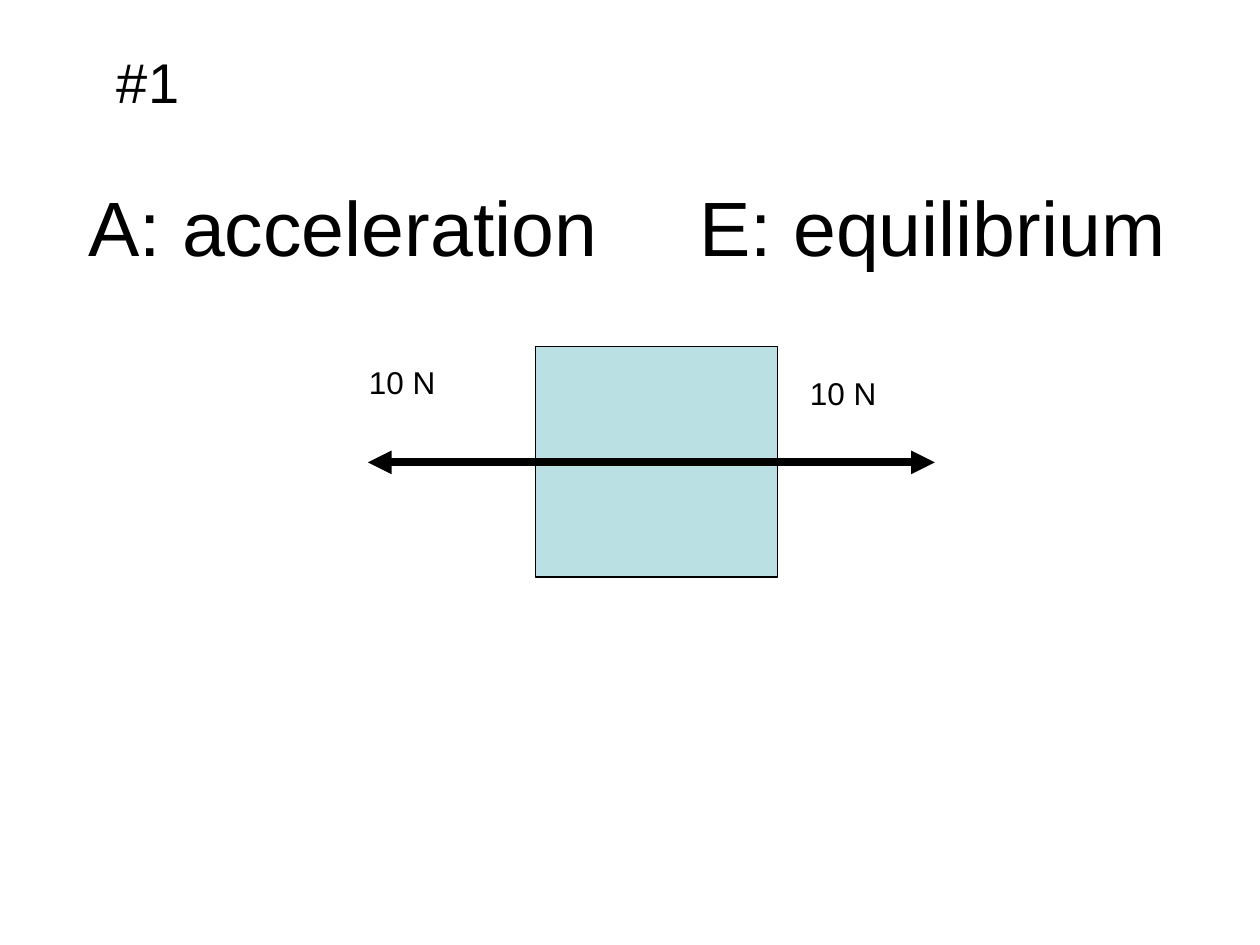
from pptx import Presentation
from pptx.dml.color import RGBColor
from pptx.enum.shapes import MSO_CONNECTOR as Connector, MSO_SHAPE as Shape
from pptx.enum.text import MSO_ANCHOR as Anchor, MSO_AUTO_SIZE as AutoSize, PP_ALIGN as Align
from pptx.oxml.ns import qn
from pptx.util import Inches, Pt
from lxml.etree import SubElement

TITLE = "A: acceleration\tE: equilibrium"
TITLE_AREA = (0.5, 1.17, 9, 1.25)
TITLE_INSET, TITLE_TAB = 0.2, 4.85
BLOCK = (4.25, 2.75, 1.92, 1.83)
FORCE_ORIGIN = (5.17, 3.67)
FORCE_REACHES = [2.25, -2.25]
LABELS = [
    ("10 N", "label", (2.83, 2.83, 1, 0.4)),
    ("10 N", "label", (6.33, 2.92, 1, 0.4)),
    ("#1", "number", (0.83, 0.33, 1.08, 0.63)),
]
THEME = {
    "font": "Arial",
    "ink": RGBColor.from_string("000000"),
    "block": RGBColor.from_string("BBE0E3"),
    "sizes": {"title": 44, "label": 18, "number": 32},
    "outline": 0.75,
    "force": 4.5,
}


def inches(values):
    return [Inches(value) for value in values]


def write(para, text, role):
    span = para.add_run()
    span.text = text
    span.font.name = THEME["font"]
    span.font.size = Pt(THEME["sizes"][role])
    span.font.color.rgb = THEME["ink"]


def add_title(page):
    title = page.shapes.title
    title.left, title.top, title.width, title.height = inches(TITLE_AREA)
    frame = title.text_frame
    frame.vertical_anchor = Anchor.MIDDLE
    frame.auto_size = AutoSize.NONE
    frame.margin_left = Inches(TITLE_INSET)
    para = frame.paragraphs[0]
    para.alignment = Align.LEFT
    tabs = SubElement(para._p.get_or_add_pPr(), qn("a:tabLst"))
    SubElement(tabs, qn("a:tab"), pos=str(Inches(TITLE_TAB)), algn="l")
    write(para, TITLE, "title")


def add_block(page):
    block = page.shapes.add_shape(Shape.RECTANGLE, *inches(BLOCK))
    block.shadow.inherit = False
    block.fill.solid()
    block.fill.fore_color.rgb = THEME["block"]
    block.line.color.rgb = THEME["ink"]
    block.line.width = Pt(THEME["outline"])


def add_force(page, reach):
    x, y = FORCE_ORIGIN
    arrow = page.shapes.add_connector(Connector.STRAIGHT, *inches((x, y, x + reach, y)))
    arrow.line.color.rgb = THEME["ink"]
    arrow.line.width = Pt(THEME["force"])
    SubElement(arrow.line._get_or_add_ln(), qn("a:tailEnd"), type="triangle")
    SubElement(arrow._element.spPr, qn("a:effectLst"))


def add_label(page, text, role, area):
    box = page.shapes.add_textbox(*inches(area))
    frame = box.text_frame
    frame.word_wrap = True
    frame.auto_size = AutoSize.SHAPE_TO_FIT_TEXT
    write(frame.paragraphs[0], text, role)


def main():
    deck = Presentation()
    deck.slide_width, deck.slide_height = inches((10, 7.5))
    page = deck.slides.add_slide(deck.slide_layouts[5])
    add_title(page)
    add_block(page)
    for reach in FORCE_REACHES:
        add_force(page, reach)
    for text, role, area in LABELS:
        add_label(page, text, role, area)
    deck.save("out.pptx")


if __name__ == "__main__":
    main()
